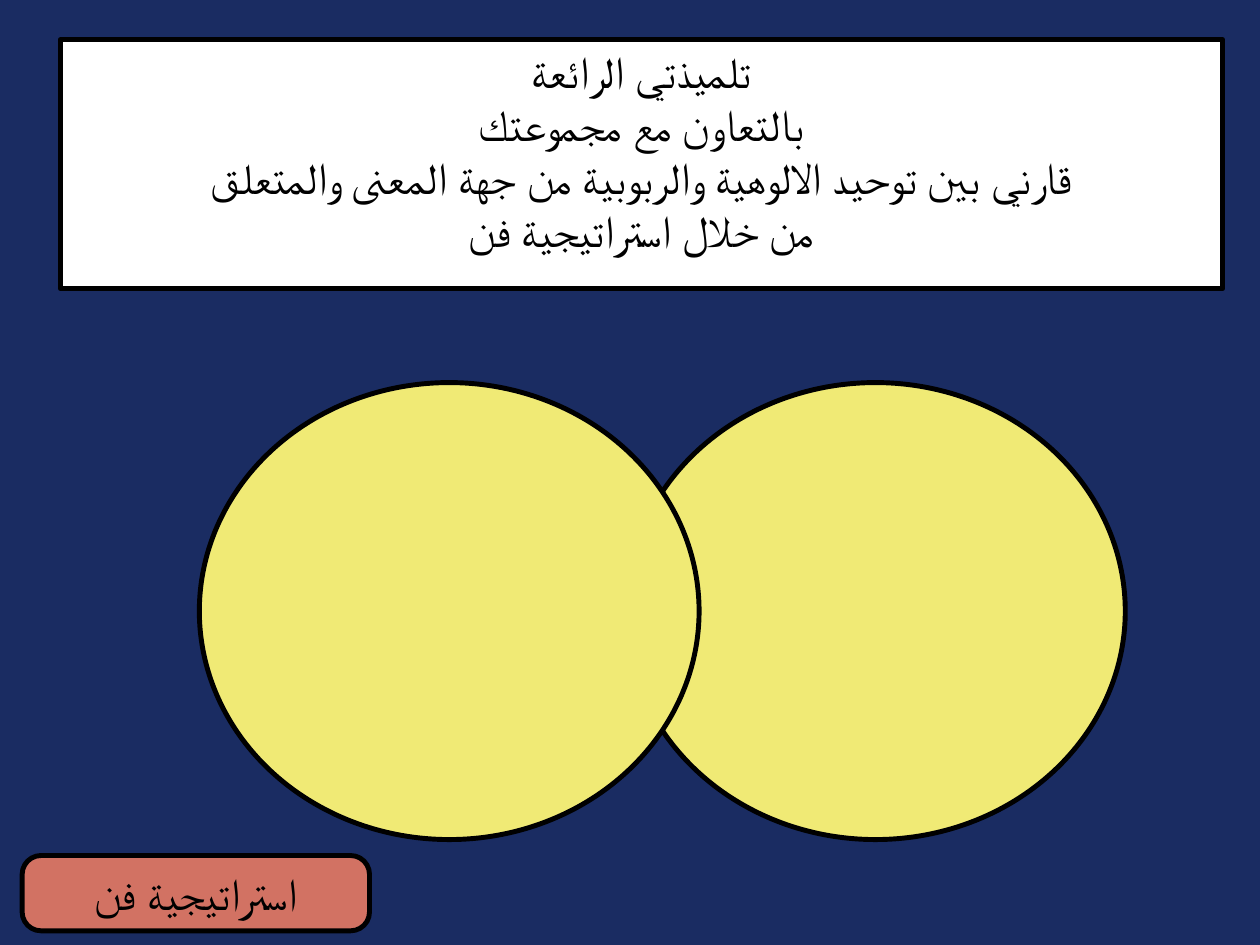
from pptx import Presentation
from pptx.dml.color import RGBColor as RGB
from pptx.enum.shapes import MSO_SHAPE as Shape
from pptx.enum.text import MSO_ANCHOR as Anchor, PP_ALIGN as Align
from pptx.util import Pt

PX = 9144  # 100 px to the inch
NAVY = RGB(0x1A, 0x2C, 0x62)
WHITE = RGB(0xFF, 0xFF, 0xFF)
BLACK = RGB(0x00, 0x00, 0x00)
YELLOW = RGB(0xF0, 0xEA, 0x75)
CORAL = RGB(0xD2, 0x72, 0x63)

TASK = [
    "تلميذتي الرائعة",
    "بالتعاون مع مجموعتك",
    "قارني بين توحيد الالوهية والربوبية من جهة المعنى والمتعلق",
    "من خلال استراتيجية فن",
]
LABEL = ["استراتيجية فن"]


class Board:
    font, size, stroke = "Roboto", Pt(36), Pt(4)

    def __init__(self, slide, back):
        self.slide = slide
        fill = slide.background.fill
        fill.solid()
        fill.fore_color.rgb = back

    def shape(self, kind, box, color):
        item = self.slide.shapes.add_shape(kind, *(n * PX for n in box))
        item.shadow.inherit = False
        item.fill.solid()
        item.fill.fore_color.rgb = color
        item.line.color.rgb = BLACK
        item.line.width = self.stroke
        return item

    def label(self, item, lines, anchor, inset):
        """Put one centred paragraph per line inside the shape."""
        frame = item.text_frame
        frame.word_wrap = True
        frame.vertical_anchor = anchor
        frame.margin_left = frame.margin_right = inset * PX
        frame.margin_top = frame.margin_bottom = inset * PX
        frame.text = "\n".join(lines)
        for para in frame.paragraphs:
            para.alignment = Align.CENTER
            para.font.name = self.font
            para.font.size = self.size
            para.font.color.rgb = BLACK


def main():
    deck = Presentation()
    deck.slide_width, deck.slide_height = 1422 * PX, 1067 * PX
    board = Board(deck.slides.add_slide(deck.slide_layouts[6]), NAVY)

    task = board.shape(Shape.RECTANGLE, (68, 45, 1312, 281), WHITE)
    board.label(task, TASK, Anchor.TOP, 5)

    for left in (706, 225):
        board.shape(Shape.OVAL, (left, 432, 564, 516), YELLOW)

    badge = board.shape(Shape.ROUNDED_RECTANGLE, (25, 966, 392, 85), CORAL)
    badge.adjustments[0] = 0.25
    board.label(badge, LABEL, Anchor.MIDDLE, 6)

    deck.save("out.pptx")


if __name__ == "__main__":
    main()
